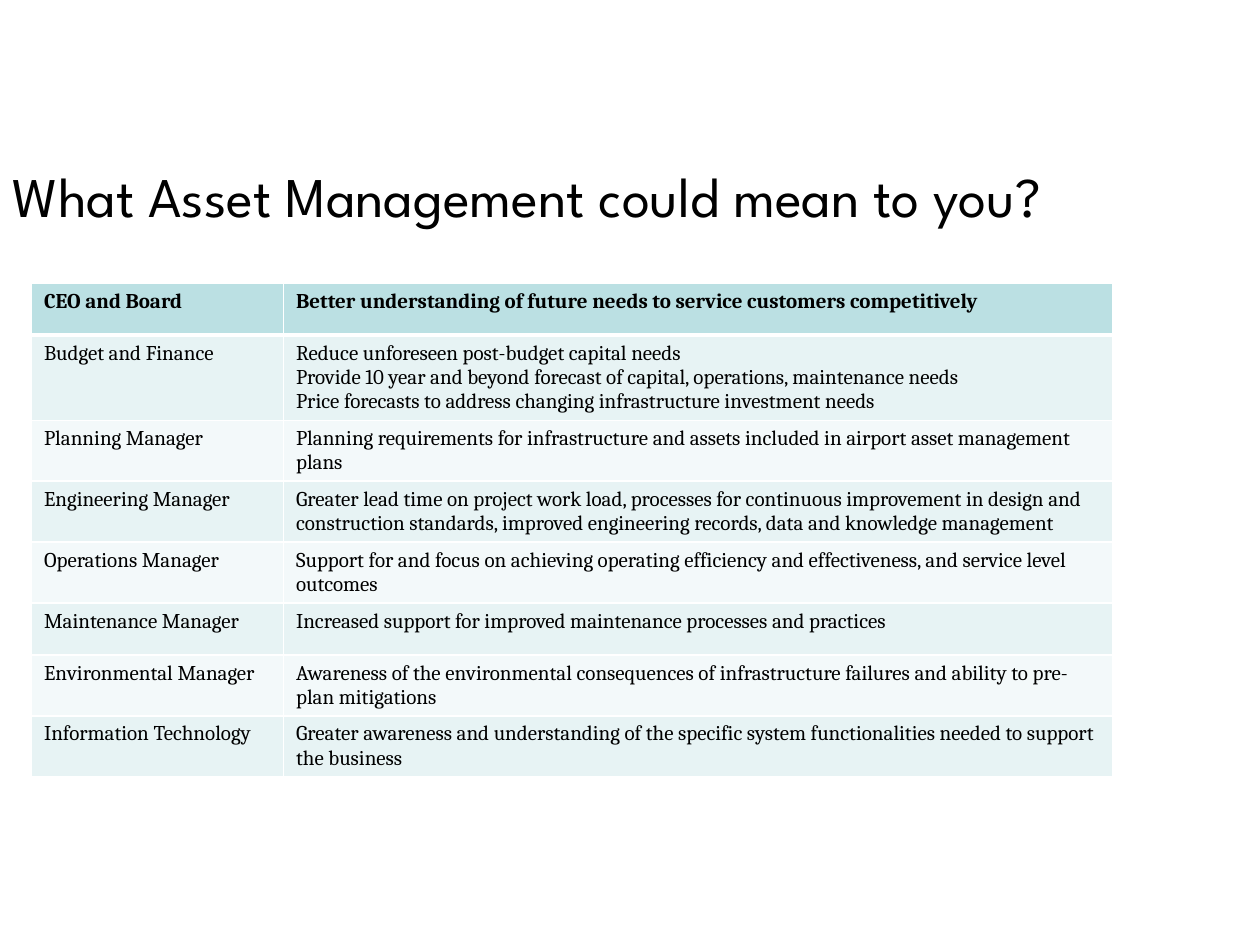
from lxml import etree
from pptx import Presentation
from pptx.dml.color import RGBColor
from pptx.enum.text import MSO_ANCHOR, MSO_AUTO_SIZE, PP_ALIGN
from pptx.oxml.ns import qn
from pptx.util import Inches, Pt

MIDDLE = MSO_ANCHOR.MIDDLE
NO_FIT = MSO_AUTO_SIZE.NONE
LEFT = PP_ALIGN.LEFT
TITLE_ONLY = 5

COLOURS = {
    "text": "000000",
    "border": "FFFFFF",
    "header": "BBE0E3",
    "odd": "E7F3F4",
    "even": "F3F9FA",
}
TITLE_FONT = "League Spartan"
TABLE_FONT = "Cambria"
COLUMN_WIDTHS = (2, 6.58)
ROW_HEIGHT = 0.41

BENEFITS = [
    ("CEO and Board",
     ["Better understanding of future needs to service customers competitively"]),
    ("Budget and Finance",
     ["Reduce unforeseen post-budget capital needs",
      "Provide 10 year and beyond forecast of capital, operations, maintenance needs",
      "Price forecasts to address changing infrastructure investment needs"]),
    ("Planning Manager",
     ["Planning requirements for infrastructure and assets included in airport "
      "asset management plans"]),
    ("Engineering Manager",
     ["Greater lead time on project work load, processes for continuous improvement "
      "in design and construction standards, improved engineering records, data and "
      "knowledge management"]),
    ("Operations Manager",
     ["Support for and focus on achieving operating efficiency and effectiveness, "
      "and service level outcomes"]),
    ("Maintenance Manager",
     ["Increased support for improved maintenance processes and practices"]),
    ("Environmental Manager",
     ["Awareness of the environmental consequences of infrastructure failures and "
      "ability to pre-plan mitigations"]),
    ("Information Technology",
     ["Greater awareness and understanding of the specific system functionalities "
      "needed to support the business"]),
]


def add_span(para, text, font, size, bold=False):
    """Add one formatted run to a paragraph."""
    span = para.add_run()
    span.text = text
    span.font.name = font
    span.font.size = Pt(size)
    span.font.bold = bold
    span.font.color.rgb = RGBColor.from_string(COLOURS["text"])


def set_borders(cell, widths):
    """Draw the cell's borders, given a width in points for each side tag."""
    properties = cell._tc.get_or_add_tcPr()
    for position, (side, width) in enumerate(widths.items()):
        line = etree.Element(qn(f"a:{side}"), w=str(Pt(width)))
        fill = etree.SubElement(line, qn("a:solidFill"))
        etree.SubElement(fill, qn("a:srgbClr"), val=COLOURS["border"])
        properties.insert(position, line)


def fill_cell(cell, lines, colour, bold, top, bottom):
    """Write a cell's paragraphs and set its fill and borders."""
    cell.fill.solid()
    cell.fill.fore_color.rgb = RGBColor.from_string(COLOURS[colour])
    set_borders(cell, {"lnL": 1, "lnR": 1, "lnT": top, "lnB": bottom})
    frame = cell.text_frame
    for index, text in enumerate(lines):
        para = frame.add_paragraph() if index else frame.paragraphs[0]
        add_span(para, text, TABLE_FONT, 12, bold)


def place_title(page, left, top, width, height):
    """Place the slide title in the given box."""
    title = page.shapes.title
    title.left, title.top = Inches(left), Inches(top)
    title.width, title.height = Inches(width), Inches(height)
    frame = title.text_frame
    frame.word_wrap = True
    frame.auto_size = NO_FIT
    frame.vertical_anchor = MIDDLE
    para = frame.paragraphs[0]
    para.alignment = LEFT
    add_span(para, "What Asset Management could mean to you?", TITLE_FONT, 32)


def place_benefits(page, left, top):
    """Place the table of benefits by role, with its corner at the given point."""
    count = len(BENEFITS)
    table = page.shapes.add_table(
        count, len(COLUMN_WIDTHS), Inches(left), Inches(top),
        Inches(sum(COLUMN_WIDTHS)), Inches(ROW_HEIGHT * count)).table
    for column, width in zip(table.columns, COLUMN_WIDTHS):
        column.width = Inches(width)
    for index, (role, benefits) in enumerate(BENEFITS):
        table.rows[index].height = Inches(ROW_HEIGHT)
        header = index == 0
        colour = "header" if header else "odd" if index % 2 else "even"
        above = 3 if index == 1 else 1
        below = 3 if header else 1
        for cell, lines in zip(table.rows[index].cells, ([role], benefits)):
            fill_cell(cell, lines, colour, header, above, below)


def main():
    """Build the slide and save the deck."""
    deck = Presentation()
    deck.slide_width, deck.slide_height = Inches(10), Inches(7.5)
    page = deck.slides.add_slide(deck.slide_layouts[TITLE_ONLY])
    place_title(page, 0, 0.92, 9.33, 1.25)
    place_benefits(page, 0.25, 2.25)
    deck.save("out.pptx")


if __name__ == "__main__":
    main()
